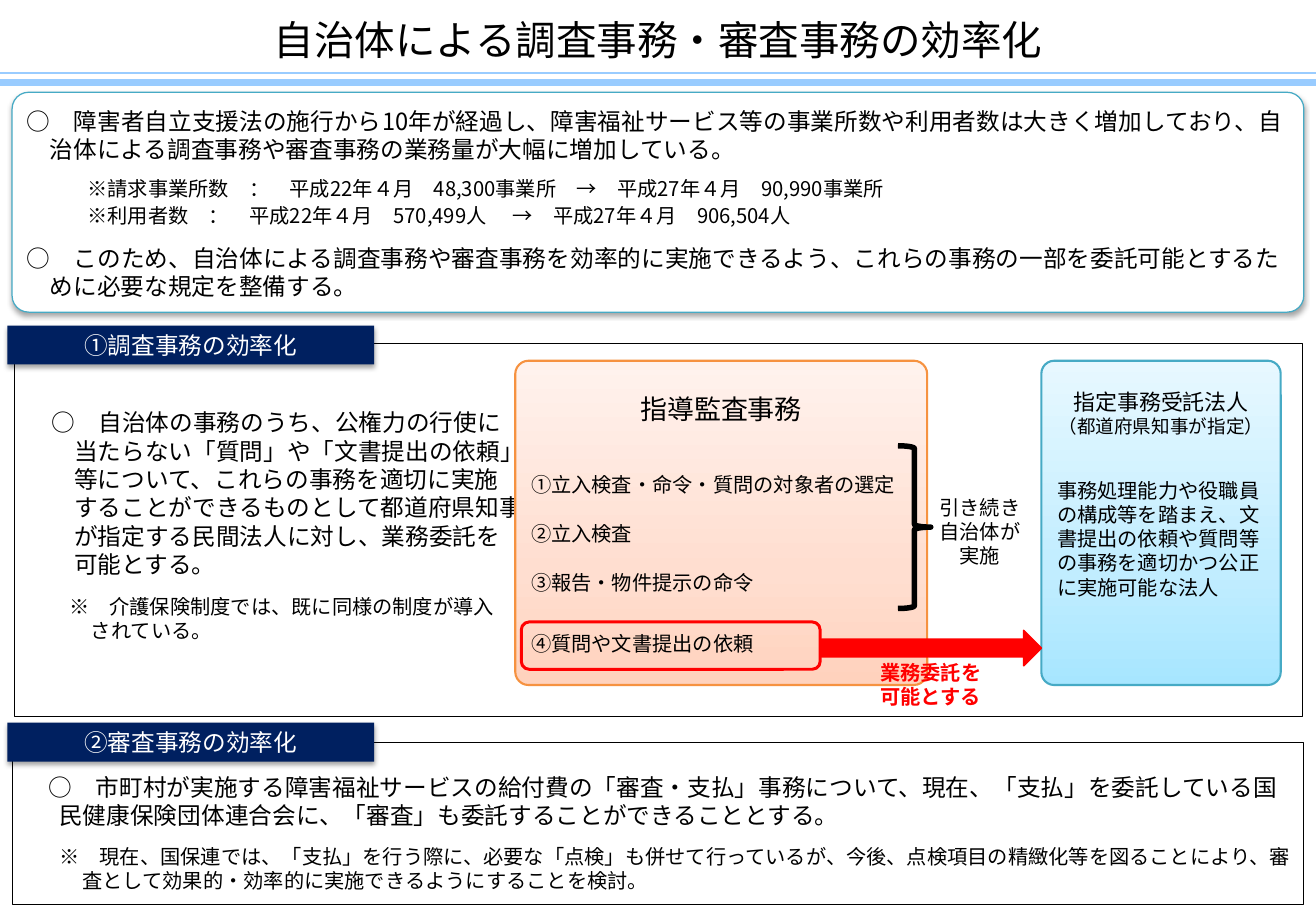
from copy import deepcopy

from lxml import etree
from pptx import Presentation
from pptx.dml.color import RGBColor
from pptx.enum.shapes import MSO_CONNECTOR, MSO_SHAPE
from pptx.enum.text import MSO_ANCHOR, MSO_AUTO_SIZE, PP_ALIGN
from pptx.oxml.ns import qn
from pptx.util import Pt

PX = 9144
RECT, ROUND = MSO_SHAPE.RECTANGLE, MSO_SHAPE.ROUNDED_RECTANGLE
BRACE, ARROW = MSO_SHAPE.RIGHT_BRACE, MSO_SHAPE.RIGHT_ARROW
STRAIGHT = MSO_CONNECTOR.STRAIGHT
TOP, MIDDLE = MSO_ANCHOR.TOP, MSO_ANCHOR.MIDDLE
LEFT, CENTER = PP_ALIGN.LEFT, PP_ALIGN.CENTER

THEME = {
    "font": "Noto Sans CJK JP", "label_font": "Calibri",
    "ink": "000000", "paper": "FFFFFF", "rule": "99CCFF", "navy": "002060",
    "alert": "FF0000", "orange": "F69240", "teal": "46AAC5",
    "orange_fade": ("FFD2BD", "FFDED0", "FFF2ED"),
    "teal_fade": ("A7E6FF", "C1EDFF", "E7F8FF"),
    "title": 24, "head": 16, "lead": 14, "firm": 13, "note": 12, "small": 11,
}


def add_box(kind, area, fill=None, line=None, width=1, adj=None):
    box = slide.shapes.add_shape(kind, *(v * PX for v in area))
    box.shadow.inherit = False
    if adj is not None:
        box.adjustments[0] = adj
    if fill is None:
        box.fill.background()
    elif isinstance(fill, tuple):
        box.fill.gradient()
        box.fill.gradient_angle = 90
        stops = box._element.spPr.find(qn("a:gradFill")).find(qn("a:gsLst"))
        stops.append(deepcopy(stops[-1]))
        for stop, colour, place in zip(box.fill.gradient_stops, fill, (0, 0.35, 1)):
            stop.color.rgb = RGBColor.from_string(colour)
            stop.position = place
    else:
        box.fill.solid()
        box.fill.fore_color.rgb = RGBColor.from_string(fill)
    if line is None:
        box.line.fill.background()
    else:
        box.line.color.rgb = RGBColor.from_string(line)
        box.line.width = Pt(width)
    return box


def write(frame, items, margins=(10, 5, 10, 5), anchor=TOP, align=LEFT,
          colour="ink", font="font", bold=False):
    frame.word_wrap = True
    frame.auto_size = MSO_AUTO_SIZE.NONE
    frame.vertical_anchor = anchor
    frame.margin_left, frame.margin_top, frame.margin_right, frame.margin_bottom = (
        v * PX for v in margins)
    for i, (text, size, style) in enumerate(items):
        para = frame.paragraphs[0] if i == 0 else frame.add_paragraph()
        para.text = text
        para.alignment = style.get("align", align)
        para.line_spacing = Pt(THEME[size] * style.get("leading", 1.2))
        para.space_before = Pt(style.get("before", 0))
        para.space_after = Pt(0)
        props = para._p.get_or_add_pPr()
        left, first = style.get("indent", (0, 0))
        props.set("marL", str(left * PX))
        props.set("indent", str(first * PX))
        etree.SubElement(props, qn("a:buNone"))
        if "tabs" in style:
            tab_list = etree.SubElement(props, qn("a:tabLst"))
            for place in style["tabs"]:
                etree.SubElement(tab_list, qn("a:tab"), pos=str(place * PX), algn="l")
        para.font.size = Pt(THEME[size])
        para.font.bold = bold
        para.font.color.rgb = RGBColor.from_string(THEME[colour])
        para.font.name = THEME[font]
        etree.SubElement(props.find(qn("a:defRPr")), qn("a:ea"), typeface=THEME["font"])


prs = Presentation()
prs.slide_width, prs.slide_height = 1083 * PX, 750 * PX
slide = prs.slides.add_slide(prs.slide_layouts[1])
title, survey = slide.placeholders

title.left, title.top, title.width, title.height = 0, 5 * PX, 1083 * PX, 54 * PX
write(title.text_frame, [("自治体による調査事務・審査事務の効率化", "title", {})],
      anchor=MIDDLE, align=CENTER)

for y, width in ((60, 0.75), (68, 4.5)):
    rule = slide.shapes.add_connector(STRAIGHT, 0, y * PX, 1083 * PX, y * PX)
    rule.line.color.rgb = RGBColor.from_string(THEME["rule"])
    rule.line.width = Pt(width)
    etree.SubElement(rule._element.spPr, qn("a:effectLst"))

background = add_box(ROUND, (10, 76, 1063, 181), THEME["paper"], THEME["teal"], 0.75, 0.075)
hanging = {"indent": (19, -19)}
stats = {"tabs": (50, 200, 494), "leading": 1.33}
write(background.text_frame, [
    ("○　障害者自立支援法の施行から10年が経過し、障害福祉サービス等の事業所数や利用者数は大きく増加しており、自治体による調査事務や審査事務の業務量が大幅に増加している。", "lead", hanging),
    ("\t※請求事業所数　：　平成22年４月　48,300事業所　→　平成27年４月　90,990事業所", "note", {**stats, "before": 6}),
    ("\t※利用者数\t：　平成22年４月　570,499人\t→　平成27年４月　906,504人", "note", stats),
    ("○　このため、自治体による調査事務や審査事務を効率的に実施できるよう、これらの事務の一部を委託可能とするために必要な規定を整備する。", "lead", {**hanging, "before": 9.5}),
], margins=(8, 8, 10, 4))

survey.left, survey.top, survey.width, survey.height = (v * PX for v in (12, 283, 1060, 307))
survey.line.color.rgb = RGBColor.from_string(THEME["ink"])
survey.line.width = Pt(0.5)
write(survey.text_frame, [(
    "○　自治体の事務のうち、公権力の行使に\v当たらない「質問」や「文書提出の依頼」\v"
    "等について、これらの事務を適切に実施\vすることができるものとして都道府県知事\v"
    "が指定する民間法人に対し、業務委託を\v可能とする。", "lead", {"indent": (39, -19)})],
    margins=(10, 53, 10, 5))

guidance = add_box(ROUND, (424, 297, 339, 267), THEME["orange_fade"], THEME["orange"], 1.25, 0.041)
write(guidance.text_frame, [
    ("指導監査事務", "head", {"align": CENTER}),
    ("①立入検査・命令・質問の対象者の選定", "note", {"before": 28}),
    ("②立入検査", "note", {"before": 14.65}),
    ("③報告・物件提示の命令", "note", {"before": 14.65}),
    ("④質問や文書提出の依頼", "note", {"before": 21.8}),
], margins=(10, 23, 10, 5))

trustee = add_box(ROUND, (857, 297, 197, 267), THEME["teal_fade"], THEME["teal"], 1.25, 0.054)
write(trustee.text_frame, [
    ("指定事務受託法人", "firm", {"align": CENTER}),
    ("（都道府県知事が指定）", "small", {"align": CENTER}),
    ("事務処理能力や役職員の構成等を踏まえ、文書提出の依頼や質問等の事務を適切かつ公正に実施可能な法人", "note", {"before": 24}),
], margins=(10, 20, 10, 5))

add_box(BRACE, (739, 367, 27, 134), line=THEME["ink"], width=3.25)
add_box(ROUND, (429, 512, 246, 39), line=THEME["alert"], width=1.75)
add_box(ARROW, (676, 519, 181, 29), THEME["alert"], THEME["alert"])

for area, text, look in (
    ((707, 540, 118, 47), "業務委託を\v可能とする",
     {"align": CENTER, "colour": "alert", "font": "label_font", "bold": True}),
    ((762, 406, 89, 63), "引き続き\v自治体が\v実施", {"align": CENTER}),
    ((32, 484, 509, 50), "※　介護保険制度では、既に同様の制度が導入\vされている。", {}),
):
    caption = slide.shapes.add_textbox(*(v * PX for v in area))
    indent = {} if look else {"indent": (33, -18)}
    write(caption.text_frame, [(text, "note", indent)], anchor=MIDDLE, **look)

review = add_box(RECT, (10, 611, 1063, 134), line=THEME["ink"], width=0.5)
write(review.text_frame, [
    ("○　市町村が実施する障害福祉サービスの給付費の「審査・支払」事務について、現在、「支払」を委託している国民健康保険団体連合会に、「審査」も委託することができることとする。", "lead", {"indent": (29, -9)}),
    ("※　現在、国保連では、「支払」を行う際に、必要な「点検」も併せて行っているが、今後、点検項目の精緻化等を図ることにより、審査として効果的・効率的に実施できるようにすることを検討。", "note", {"indent": (48, -19), "before": 9}),
], margins=(10, 25, 10, 5))

raised = [background]
for y, heading in ((268, "①調査事務の効率化"), (595, "②審査事務の効率化")):
    banner = add_box(RECT, (6, y, 302, 32), THEME["navy"])
    write(banner.text_frame, [(heading, "lead", {})], anchor=MIDDLE, align=CENTER, colour="paper")
    raised.append(banner)

for panel in raised:
    effects = panel._element.spPr.find(qn("a:effectLst"))
    shadow = etree.SubElement(effects, qn("a:outerShdw"), blurRad=str(Pt(3.1)),
                              dist=str(Pt(1.7)), dir="5400000", rotWithShape="0")
    shade = etree.SubElement(shadow, qn("a:srgbClr"), val=THEME["ink"])
    etree.SubElement(shade, qn("a:alpha"), val="36000")

prs.save("out.pptx")
